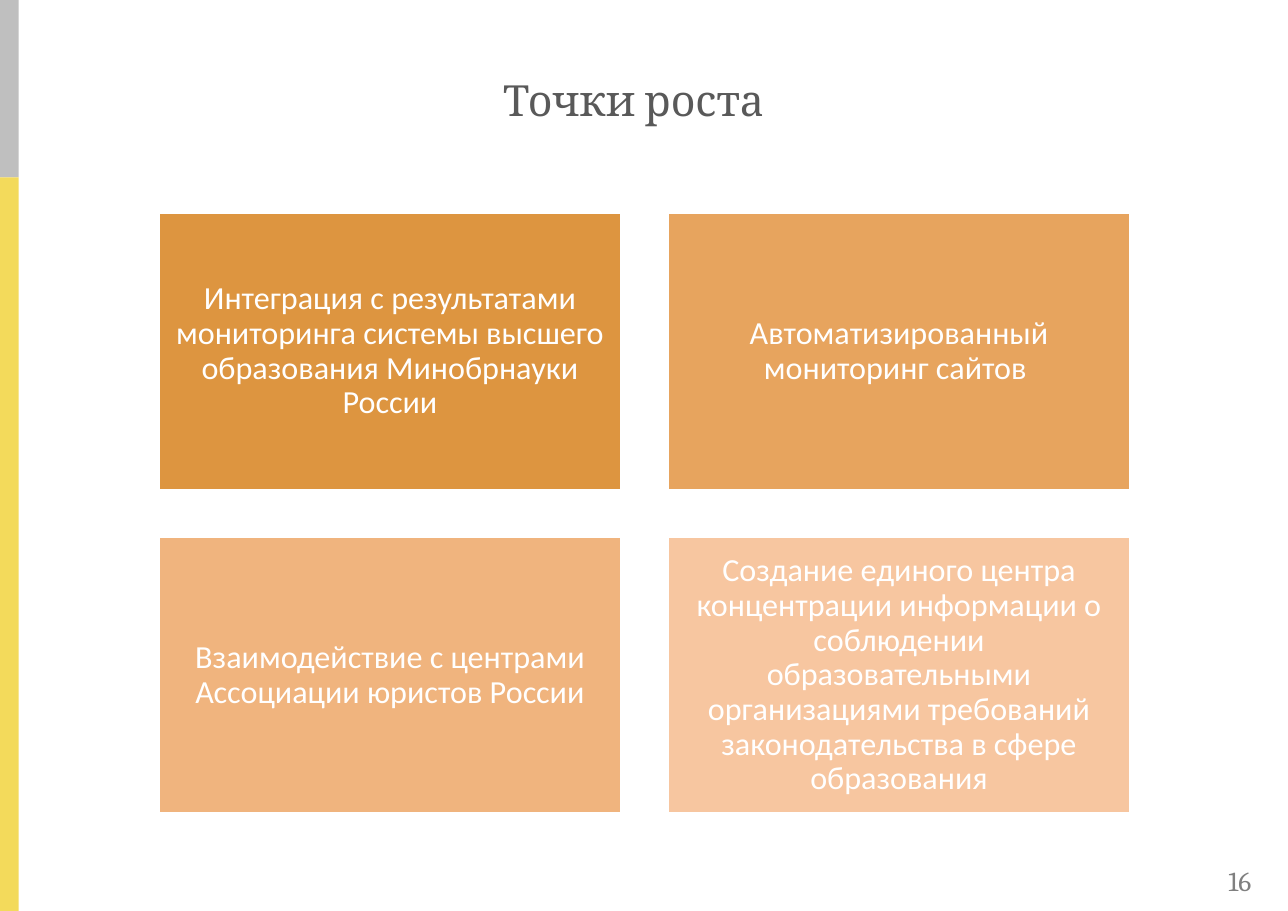
import pptx
import pptx.util
import pptx.dml.color
import pptx.enum.shapes
import pptx.enum.text

Inches = pptx.util.Inches
Pt = pptx.util.Pt
RGBColor = pptx.dml.color.RGBColor
RECTANGLE = pptx.enum.shapes.MSO_SHAPE.RECTANGLE
MIDDLE = pptx.enum.text.MSO_ANCHOR.MIDDLE
CENTER = pptx.enum.text.PP_ALIGN.CENTER

WHITE = RGBColor(0xFF, 0xFF, 0xFF)
BAR_GREY = RGBColor(0xBF, 0xBF, 0xBF)
BAR_YELLOW = RGBColor(0xF3, 0xDA, 0x5B)
TITLE_GREY = RGBColor(0x59, 0x59, 0x59)
NUMBER_GREY = RGBColor(0x80, 0x80, 0x80)
ORANGES = [
    RGBColor(0xDD, 0x95, 0x40),
    RGBColor(0xE7, 0xA4, 0x5E),
    RGBColor(0xF0, 0xB4, 0x7E),
    RGBColor(0xF7, 0xC6, 0xA0),
]
GROWTH_POINTS = [
    "Интеграция с результатами мониторинга системы высшего образования Минобрнауки России",
    "Автоматизированный мониторинг сайтов ",
    "Взаимодействие с центрами Ассоциации юристов России",
    "Создание единого центра концентрации информации о соблюдении "
    "образовательными организациями требований законодательства в сфере образования",
]


def add_rectangle(left, top, width, height, color):
    box = page.shapes.add_shape(
        RECTANGLE, Inches(left), Inches(top), Inches(width), Inches(height))
    box.shadow.inherit = False
    box.fill.solid()
    box.fill.fore_color.rgb = color
    box.line.fill.background()
    return box


def write_text(box, text, font_name, size, color):
    para = box.text_frame.paragraphs[0]
    para.text = text
    para.font.name = font_name
    para.font.size = Pt(size)
    para.font.color.rgb = color
    return para


deck = pptx.Presentation()
deck.slide_width = Inches(11.69)
deck.slide_height = Inches(8.27)
page = deck.slides.add_slide(deck.slide_layouts[6])

# Side bar
add_rectangle(0, 0, 0.17, 1.61, BAR_GREY)
add_rectangle(0, 1.61, 0.17, 6.66, BAR_YELLOW)

# Page number
number_box = page.shapes.add_textbox(Inches(11.05), Inches(7.79), Inches(0.58), Inches(0.4))
number_box.text_frame.word_wrap = False
write_text(number_box, "16", "Cambria", 18, NUMBER_GREY)

# Title
title_box = page.shapes.add_textbox(Inches(0.59), Inches(0.33), Inches(10.32), Inches(1.15))
title_box.text_frame.word_wrap = True
title_box.text_frame.vertical_anchor = MIDDLE
title = write_text(title_box, "Точки роста", "Cambria", 28, TITLE_GREY)
title.alignment = CENTER

# Two by two grid of growth points
for index, (text, color) in enumerate(zip(GROWTH_POINTS, ORANGES)):
    row, column = divmod(index, 2)
    card = add_rectangle(1.44 + column * 4.62, 1.93 + row * 2.94, 4.2, 2.52, color)
    card.line.color.rgb = WHITE
    card.line.width = Pt(2)
    frame = card.text_frame
    frame.word_wrap = True
    frame.vertical_anchor = MIDDLE
    frame.margin_left = frame.margin_right = Inches(0.09)
    frame.margin_top = frame.margin_bottom = Inches(0.09)
    para = write_text(card, text, "Calibri", 21, WHITE)
    para.alignment = CENTER
    para.line_spacing = 0.9

deck.save("out.pptx")
